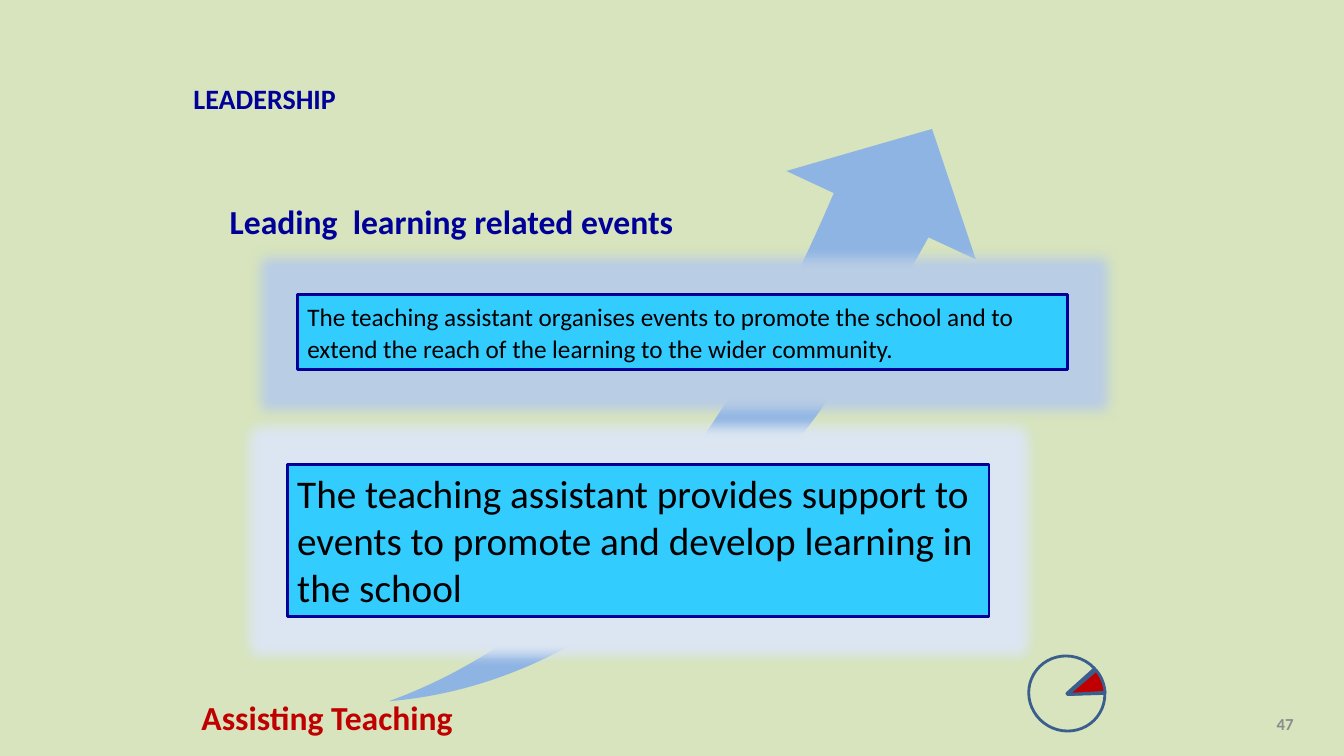
from pptx import Presentation
from pptx.dml.color import RGBColor
from pptx.enum.shapes import MSO_SHAPE as Shape
from pptx.enum.text import MSO_ANCHOR as Anchor, MSO_AUTO_SIZE as AutoSize, PP_ALIGN as Align
from pptx.oxml import parse_xml
from pptx.oxml.ns import nsdecls
from pptx.util import Inches, Pt

# Content
NAVY, RED, CYAN, PIE_LINE = "000099", "C00000", "33CCFF", "3A5F8C"

# text, (left, top, width, height), size, colour
headings = [
    ("LEADERSHIP", (1.82, 0.76, 9.02, 0.44), 20, NAVY),
    ("Leading  learning related events", (2.18, 1.94, 7.32, 0.5), 24, NAVY),
    ("Assisting Teaching", (1.9, 6.86, 3.58, 0.5), 24, RED),
]

# text, box, size, glow colour, line spacing, space after
steps = [
    ("The teaching assistant organises events to promote the school and to "
     "extend the reach of the learning to the wider community.",
     (2.95, 2.92, 7.64, 0.75), 18, "B9CDE5", 1.07, 8),
    ("The teaching assistant provides support to events to promote and "
     "develop learning in the school",
     (2.85, 4.61, 6.96, 1.51), 28, "DCE6F2", 1, 0),
]

# box, start angle, end angle (degrees), fill
PIE_BOX = (10.22, 6.52, 0.74, 0.74)
slices = [
    ((10.21, 6.5, 0.74, 0.76), 233.72, 198.04, None),
    (PIE_BOX, 198.5, 199.46, None),
    (PIE_BOX, 199.28, 236.43, RED),
    (PIE_BOX, 237.68, 238.17, "CC99FF"),
]

prs = Presentation()
prs.slide_width, prs.slide_height = Inches(13.33), Inches(7.5)
s = prs.slides.add_slide(prs.slide_layouts[6])


def rgb(value):
    return RGBColor.from_string(value)


def add_shape(kind, box, fill=None, line=None, parent=s):
    sp = parent.shapes.add_shape(kind, *map(Inches, box))
    sp.shadow.inherit = False
    if fill:
        sp.fill.solid()
        sp.fill.fore_color.rgb = rgb(fill)
    else:
        sp.fill.background()
    if line:
        sp.line.color.rgb = rgb(line)
        sp.line.width = Pt(2)
    else:
        sp.line.fill.background()
    return sp


def write(sp, text, size, color, bold=False, align=Align.LEFT,
          anchor=Anchor.TOP, fit=AutoSize.SHAPE_TO_FIT_TEXT):
    tf = sp.text_frame
    tf.word_wrap = True
    tf.auto_size = fit
    tf.vertical_anchor = anchor
    p = tf.paragraphs[0]
    p.text = text
    p.alignment = align
    p.font.name, p.font.size, p.font.bold = "Calibri", Pt(size), bold
    p.font.color.rgb = rgb(color)
    return p


def add_glow(sp, color, radius):
    effects = sp._element.spPr.find(
        "{http://schemas.openxmlformats.org/drawingml/2006/main}effectLst")
    effects.append(parse_xml(
        f'<a:glow {nsdecls("a")} rad="{Pt(radius)}"><a:srgbClr val="{color}"/></a:glow>'))


# Background
s.background.fill.solid()
s.background.fill.fore_color.rgb = rgb("D7E4BD")

# Rising arrow
arrow = add_shape(Shape.SWOOSH_ARROW, (3.39, 2.19, 7.1, 4.12), "8EB4E3")
arrow.adjustments[0] = arrow.adjustments[1] = 0.25
arrow.rotation = 288.6
arrow._element.spPr.xfrm.set("flipV", "1")

# Headings
for text, box, size, color in headings:
    write(s.shapes.add_textbox(*map(Inches, box)), text, size, color, bold=True)

# Glowing step boxes
for text, box, size, glow, spacing, after in steps:
    sp = add_shape(Shape.RECTANGLE, box, CYAN, NAVY)
    add_glow(sp, glow, 18)
    p = write(sp, text, size, "000000")
    p.line_spacing = spacing
    p.space_after = Pt(after)

# Pie; angles are stored in 60000ths of a degree, adjustments in 100000ths
pie = s.shapes.add_group_shape()
for box, start, end, fill in slices:
    sp = add_shape(Shape.PIE, box, fill, PIE_LINE, pie)
    sp.adjustments[0], sp.adjustments[1] = start * 0.6, end * 0.6
    sp.rotation = 120.1

# Slide number
number = s.shapes.add_textbox(*map(Inches, (9.82, 6.98, 3.11, 0.4)))
write(number, "47", 12, "8C8C8C", True, Align.RIGHT, Anchor.MIDDLE, AutoSize.NONE)

prs.save("out.pptx")
